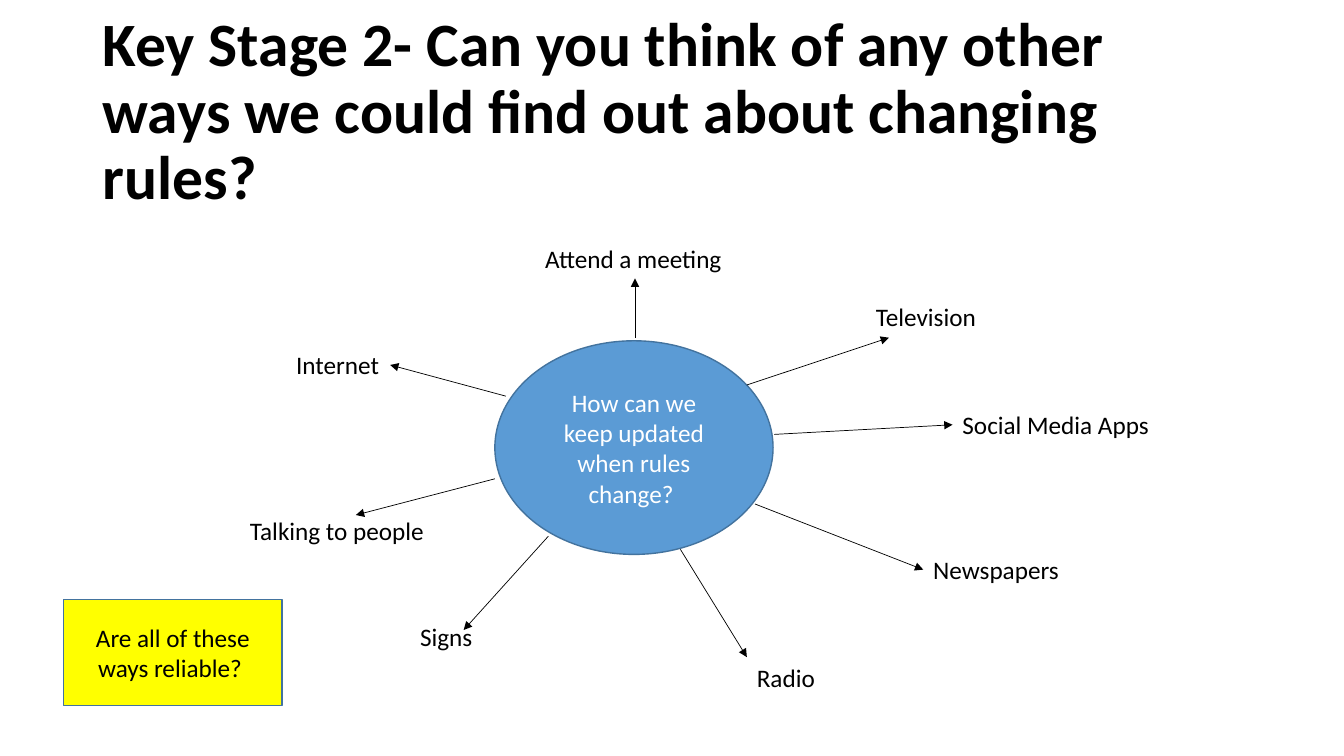
from dataclasses import dataclass
from typing import Optional

from lxml import etree
from pptx import Presentation
from pptx.dml.color import RGBColor
from pptx.enum.shapes import MSO_CONNECTOR, MSO_SHAPE
from pptx.enum.text import MSO_ANCHOR, MSO_AUTO_SIZE, PP_ALIGN
from pptx.oxml.ns import qn
from pptx.util import Pt

STRAIGHT = MSO_CONNECTOR.STRAIGHT
OVAL, RECTANGLE = MSO_SHAPE.OVAL, MSO_SHAPE.RECTANGLE
LEFT, CENTER = PP_ALIGN.LEFT, PP_ALIGN.CENTER
MIDDLE, TOP = MSO_ANCHOR.MIDDLE, MSO_ANCHOR.TOP
NO_FIT, GROW = MSO_AUTO_SIZE.NONE, MSO_AUTO_SIZE.SHAPE_TO_FIT_TEXT
BOTTOM_SIDE, LEFT_SIDE, RIGHT_SIDE = 2, 1, 3
TITLE_ONLY = 5
LABEL_HEIGHT = 29


@dataclass(frozen=True)
class Theme:
    font: str = "Calibri"
    title_size: float = 44
    body_size: float = 18
    black: RGBColor = RGBColor(0x00, 0x00, 0x00)
    white: RGBColor = RGBColor(0xFF, 0xFF, 0xFF)
    blue: RGBColor = RGBColor(0x5B, 0x9B, 0xD5)
    outline: RGBColor = RGBColor(0x43, 0x73, 0x9E)
    yellow: RGBColor = RGBColor(0xFF, 0xFF, 0x00)
    outline_width: float = 1
    arrow_width: float = 0.5


@dataclass(frozen=True)
class Bubble:
    text: str
    kind: MSO_SHAPE
    left: float
    top: float
    width: float
    height: float
    fill: RGBColor
    color: RGBColor


@dataclass(frozen=True)
class Idea:
    """A label, its arrow, and the label side the arrow joins, if any."""
    text: str
    left: float
    top: float
    width: float
    start: tuple[float, float]
    end: tuple[float, float]
    side: Optional[int] = None


THEME = Theme()
TITLE = "Key Stage 2- Can you think of any other ways we could find out about changing rules?"
BUBBLES = [
    Bubble("How can we keep updated when rules change? ", OVAL,
           353.5, 243.4, 198.7, 152.6, THEME.blue, THEME.white),
    Bubble("Are all of these ways reliable? ", RECTANGLE,
           45.4, 428.4, 156.2, 75.6, THEME.yellow, THEME.black),
]
IDEAS = [
    Idea("Attend a meeting", 382.3, 169.9, 142.6, (453.6, 241.2), (453.6, 198.9), BOTTOM_SIDE),
    Idea("Television", 618.5, 211.7, 87.1, (533.5, 275), (635, 241.2)),
    Idea("Social Media Apps", 680.4, 288.9, 149, (553, 310.3), (680.4, 303.8), LEFT_SIDE),
    Idea("Newspapers", 659.5, 392.4, 105.1, (539.3, 360), (659.5, 406.8), LEFT_SIDE),
    Idea("Radio", 533.5, 469.4, 56.2, (486, 392.4), (533.5, 469.4)),
    Idea("Signs", 293, 440.6, 52.6, (391.7, 383), (331.2, 450)),
    Idea("Talking to people", 171.4, 364.3, 140.4, (353.5, 342), (254.2, 367.9)),
    Idea("Internet", 204.5, 246.2, 74.2, (361.4, 283), (279.4, 260.6), RIGHT_SIDE),
]


def apply_format(target, values: dict) -> None:
    for name, value in values.items():
        setattr(target, name, value)


def write_text(shape, text: str, color: RGBColor, align: PP_ALIGN, frame_format: dict,
               size: float = THEME.body_size, bold: bool = False):
    frame = shape.text_frame
    apply_format(frame, frame_format)
    para = frame.paragraphs[0]
    para.alignment = align
    span = para.add_run()
    span.text = text
    apply_format(span.font, {"name": THEME.font, "size": Pt(size), "bold": bold})
    span.font.color.rgb = color
    return para


def add_title(page) -> None:
    title = page.shapes.title
    apply_format(title, {"left": Pt(66.2), "top": Pt(28.8), "width": Pt(828), "height": Pt(104.4)})
    para = write_text(title, TITLE, THEME.black, LEFT,
                      {"word_wrap": True, "auto_size": NO_FIT, "vertical_anchor": MIDDLE},
                      THEME.title_size, True)
    para.line_spacing = 0.9


def add_bubble(page, bubble: Bubble) -> None:
    shape = page.shapes.add_shape(bubble.kind, Pt(bubble.left), Pt(bubble.top),
                                  Pt(bubble.width), Pt(bubble.height))
    shape.shadow.inherit = False
    shape.fill.solid()
    shape.fill.fore_color.rgb = bubble.fill
    shape.line.color.rgb = THEME.outline
    shape.line.width = Pt(THEME.outline_width)
    write_text(shape, bubble.text, bubble.color, CENTER,
               {"word_wrap": True, "vertical_anchor": MIDDLE})


def add_idea(page, idea: Idea) -> None:
    label = page.shapes.add_textbox(Pt(idea.left), Pt(idea.top), Pt(idea.width), Pt(LABEL_HEIGHT))
    write_text(label, idea.text, THEME.black, LEFT,
               {"word_wrap": False, "auto_size": GROW, "vertical_anchor": TOP})

    arrow = page.shapes.add_connector(STRAIGHT, *map(Pt, idea.start + idea.end))
    if idea.side is not None:
        arrow.end_connect(label, idea.side)
    arrow.line.color.rgb = THEME.black
    arrow.line.width = Pt(THEME.arrow_width)
    etree.SubElement(arrow.line._get_or_add_ln(), qn("a:tailEnd"), type="triangle")
    etree.SubElement(arrow._element.spPr, qn("a:effectLst"))


def main() -> None:
    deck = Presentation()
    deck.slide_width, deck.slide_height = Pt(960), Pt(540)
    page = deck.slides.add_slide(deck.slide_layouts[TITLE_ONLY])

    # Heading
    add_title(page)

    # Central question and reliability prompt
    for bubble in BUBBLES:
        add_bubble(page, bubble)

    # Ideas around the question
    for idea in IDEAS:
        add_idea(page, idea)

    deck.save("out.pptx")


if __name__ == "__main__":
    main()
